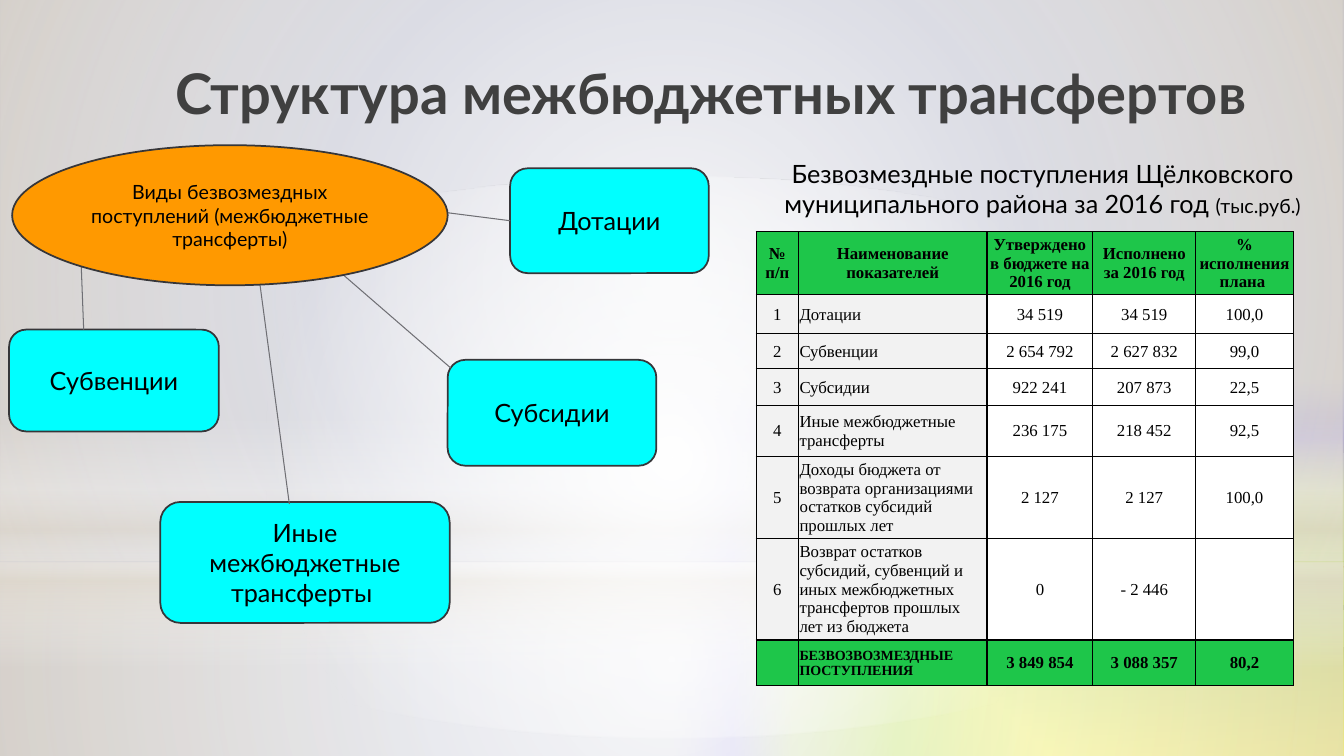
from lxml import etree
from pptx import Presentation
from pptx.dml.color import RGBColor
from pptx.enum.shapes import MSO_CONNECTOR, MSO_SHAPE
from pptx.enum.text import MSO_ANCHOR, PP_ALIGN
from pptx.oxml.ns import qn
from pptx.util import Inches, Pt

STRAIGHT = MSO_CONNECTOR.STRAIGHT
RECT, ROUNDED, OVAL = MSO_SHAPE.RECTANGLE, MSO_SHAPE.ROUNDED_RECTANGLE, MSO_SHAPE.OVAL
LEFT, CENTER, RIGHT = PP_ALIGN.LEFT, PP_ALIGN.CENTER, PP_ALIGN.RIGHT
TOP, MIDDLE = MSO_ANCHOR.TOP, MSO_ANCHOR.MIDDLE
BODY_FONT, TABLE_FONT = "Lato", "Times New Roman"
COLORS = {
    "text": "000000", "title": "404040", "outline": "363639", "link": "6F6F74",
    "box": "00FFFF", "oval": "FF9900", "green": "1EC64A", "grey": "F2F2F2",
    "white": "FFFFFF", "sand": "E3DCCF", "yellow": "FFFF00", "lime": "99CC00",
    "olive": "9EBA58", "violet": "746DCD", "mist": "A3A6BB",
}
WHOLE_SLIDE = (0, 0, 13.33, 7.5)
CENTRE_FOCUS = (50, 50, 50, 50)

# Box name: place, then start and end of its link, all relative to the diagram
TRANSFER_BOXES = {
    "Дотации": ((4.97, 0.23, 1.97, 1.04), (4.11, 0.64), (4.97, 0.75)),
    "Субвенции": ((0, 1.83, 2.08, 1.01), (0.71, 1.04), (0.74, 1.83)),
    "Субсидии": ((4.35, 2.13, 2.07, 1.05), (3.03, 1.04), (4.38, 2.21)),
    "Иные межбюджетные трансферты ": ((1.5, 3.54, 2.87, 1.2), (2.44, 1.02), (2.78, 3.56)),
}
COLUMN_WIDTHS = (0.42, 1.87, 1.05, 1.02, 0.97)
ROW_HEIGHTS = (0.62, 0.39, 0.35, 0.36, 0.51, 0.81, 1.01, 0.45)
RECEIPTS = (
    ("№ п/п", "Наименование показателей", "Утверждено в бюджете на 2016 год",
     "Исполнено за 2016 год", "% исполнения плана "),
    ("1", "Дотации", "34 519", "34 519", "100,0"),
    ("2", "Субвенции", "2 654 792", "2 627 832", "99,0"),
    ("3", "Субсидии", "922 241", "207 873", "22,5"),
    ("4", "Иные межбюджетные трансферты", "236 175", "218 452", "92,5"),
    ("5", "Доходы бюджета от возврата организациями остатков субсидий прошлых лет",
     "2 127", "2 127", "100,0"),
    ("6", "Возврат остатков субсидий, субвенций и иных межбюджетных трансфертов "
     "прошлых лет из бюджета", "0", "- 2 446", ""),
    ("", "БЕЗВОЗВОЗМЕЗДНЫЕ ПОСТУПЛЕНИЯ", "3 849 854", "3 088 357", "80,2"),
)


def rgb(name):
    return RGBColor.from_string(COLORS[name])


def inches(values):
    return [Inches(value) for value in values]


def set_gradient(fill, holder, stops, path=None, focus=CENTRE_FOCUS, angle=90):
    """Fill with (position, colour, opacity) stops, all in percent."""
    fill.solid()
    solid = holder.find(".//" + qn("a:solidFill"))
    gradient = etree.Element(qn("a:gradFill"), rotWithShape="1")
    stop_list = etree.SubElement(gradient, qn("a:gsLst"))
    for position, color, opacity in stops:
        stop = etree.SubElement(stop_list, qn("a:gs"), pos=str(position * 1000))
        tint = etree.SubElement(stop, qn("a:srgbClr"), val=COLORS[color])
        if opacity < 100:
            etree.SubElement(tint, qn("a:alpha"), val=str(opacity * 1000))
    if path:
        shade = etree.SubElement(gradient, qn("a:path"), path=path)
        sides = {side: str(part * 1000) for side, part in zip("ltrb", focus)}
        etree.SubElement(shade, qn("a:fillToRect"), **sides)
    else:
        etree.SubElement(gradient, qn("a:lin"), ang=str(angle * 60000), scaled="0")
    solid.getparent().replace(solid, gradient)


def style_font(font, size, color="text", name=BODY_FONT, bold=False):
    font.size, font.name, font.bold = Pt(size), name, bold
    font.color.rgb = rgb(color)


def add_shape(page, kind, place):
    shape = page.shapes.add_shape(kind, *inches(place))
    shape.shadow.inherit = False
    return shape


def add_backdrop(page, box):
    left, top, width, height = box
    set_gradient(page.background.fill, page.element, (
        (0, "yellow", 100), (40, "lime", 100), (68, "olive", 100),
        (84, "violet", 100), (100, "mist", 100)), "rect", (100, 100, 0, 0))
    horizon = 5.58
    layers = (
        (RECT, horizon, height - horizon,
         ((0, "white", 91), (37, "white", 76), (100, "sand", 79)), "circle"),
        (RECT, 0, horizon,
         ((0, "white", 89), (48, "white", 62), (100, "sand", 79)), "circle"),
        (RECT, 4.12, 2.5,
         ((0, "white", 0), (29, "white", 30), (45, "sand", 40),
          (55, "white", 26), (65, "sand", 60), (100, "white", 0)), None),
        (OVAL, 1.75, 5.58, ((0, "white", 100), (56, "white", 0)), "circle"),
    )
    for kind, offset, depth, stops, path in layers:
        layer = add_shape(page, kind, (left, top + offset, width, depth))
        layer.line.fill.background()
        set_gradient(layer.fill, layer.element, stops, path)


def add_text(page, box, spans, align, bold=False, color="text"):
    """Add one paragraph of (text, size) spans."""
    frame = page.shapes.add_textbox(*inches(box)).text_frame
    frame.word_wrap, frame.vertical_anchor = True, TOP
    para = frame.paragraphs[0]
    para.alignment = align
    style_font(para.font, spans[0][1], color, bold=bold)
    for text, size in spans:
        span = para.add_run()
        span.text = text
        style_font(span.font, size, color, bold=bold)


def add_node(page, kind, place, text, size, color):
    node = add_shape(page, kind, place)
    node.fill.solid()
    node.fill.fore_color.rgb = rgb(color)
    node.line.color.rgb, node.line.width = rgb("outline"), Pt(1.25)
    frame = node.text_frame
    frame.word_wrap, frame.vertical_anchor = True, MIDDLE
    para = frame.paragraphs[0]
    para.text, para.alignment = text, CENTER
    style_font(para.font, size)
    return node


def add_diagram(page, box):
    left, top, width, height = box

    def shift(x, y):
        return left + x, top + y

    for name, (place, start, end) in TRANSFER_BOXES.items():
        node = add_node(page, ROUNDED, shift(*place[:2]) + place[2:], name, 18, "box")
        link = page.shapes.add_connector(STRAIGHT, *inches(shift(*start) + shift(*end)))
        link.line.color.rgb, link.line.width = rgb("link"), Pt(0.75)
        etree.SubElement(link.element.spPr, qn("a:effectLst"))
        if name == "Дотации":
            link.end_connect(node, 1)
    add_node(page, OVAL, shift(0.03, 0) + (4.32, 1.39),
             "Виды безвозмездных поступлений (межбюджетные трансферты)", 14, "oval")


def add_borders(cell):
    properties = cell._tc.get_or_add_tcPr()
    for index, side in enumerate(("lnL", "lnR", "lnT", "lnB")):
        border = etree.Element(qn("a:" + side), w=str(Pt(1)))
        solid = etree.SubElement(border, qn("a:solidFill"))
        etree.SubElement(solid, qn("a:srgbClr"), val=COLORS["text"])
        properties.insert(index, border)


def add_receipts_table(page, box):
    table = page.shapes.add_table(len(RECEIPTS), len(COLUMN_WIDTHS), *inches(box)).table
    table.first_row = table.horz_banding = False
    for column, width in zip(table.columns, COLUMN_WIDTHS):
        column.width = Inches(width)
    last = len(RECEIPTS) - 1
    for r, (values, height) in enumerate(zip(RECEIPTS, ROW_HEIGHTS)):
        table.rows[r].height = Inches(height)
        strong = r in (0, last)
        for c, text in enumerate(values):
            cell = table.cell(r, c)
            cell.vertical_anchor = MIDDLE
            cell.margin_left = cell.margin_right = cell.margin_top = Inches(0.01)
            cell.margin_bottom = 0
            cell.fill.solid()
            cell.fill.fore_color.rgb = rgb("green" if strong else "grey" if c < 2 else "white")
            add_borders(cell)
            para = cell.text_frame.paragraphs[0]
            para.text = text
            para.alignment = LEFT if c == 1 and r else CENTER
            size = 10 if (r, c) == (last, 1) else 12
            style_font(para.font, size, name=TABLE_FONT, bold=strong)


def main():
    deck = Presentation()
    deck.slide_width, deck.slide_height = inches(WHOLE_SLIDE[2:])
    page = deck.slides.add_slide(deck.slide_layouts[6])
    add_backdrop(page, WHOLE_SLIDE)
    add_text(page, (0.62, 0.53, 11.84, 0.97),
             [("Структура межбюджетных трансфертов", 40)], RIGHT, True, "title")
    add_diagram(page, (0.09, 1.44, 6.94, 4.74))
    add_text(page, (7.48, 1.52, 5.72, 0.71),
             [("Безвозмездные поступления Щёлковского муниципального района за 2016 год ", 18),
              ("(тыс.руб.)", 14)], CENTER)
    add_receipts_table(page, (7.5, 2.3, 5.33, 4.5))
    deck.save("out.pptx")


if __name__ == "__main__":
    main()
